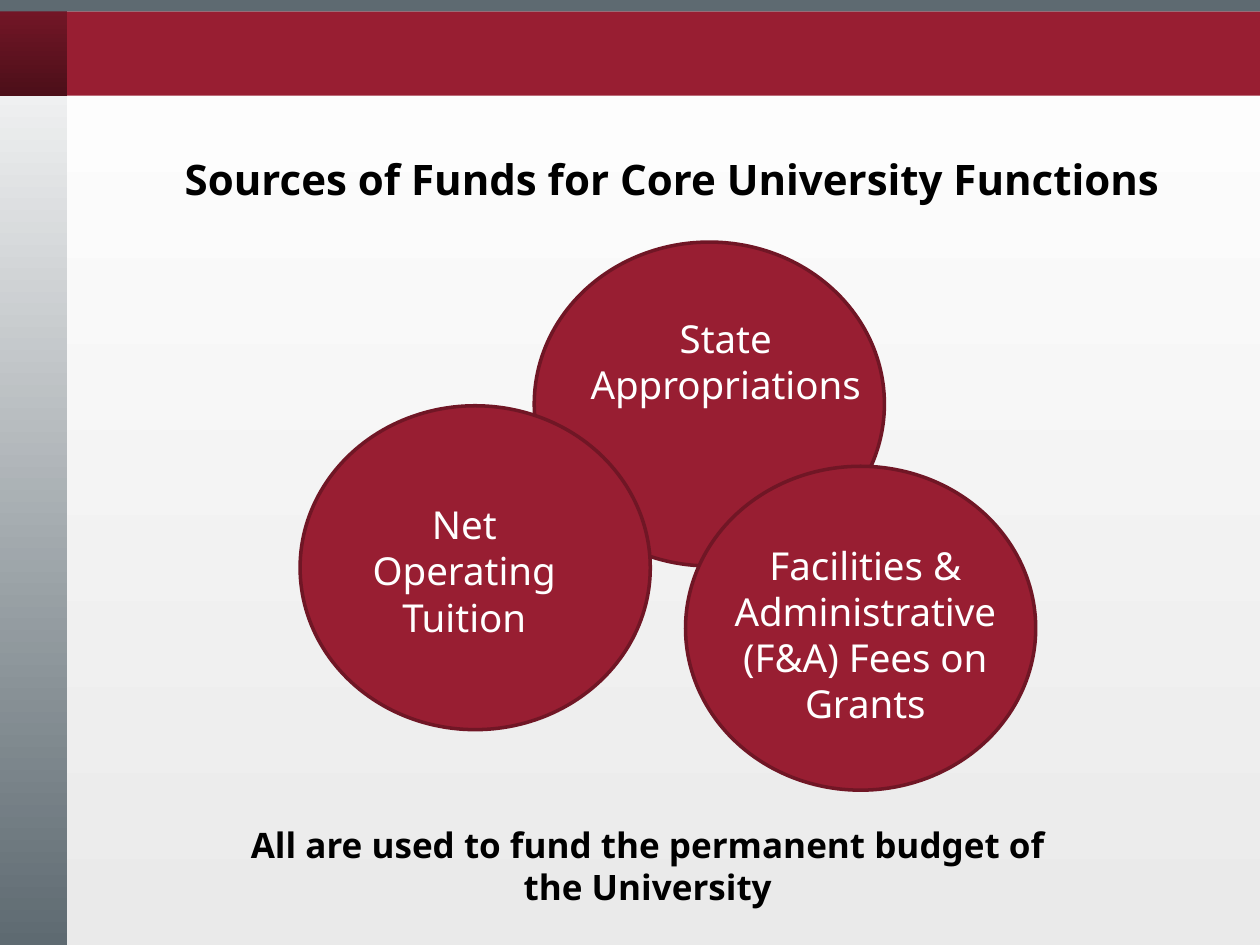
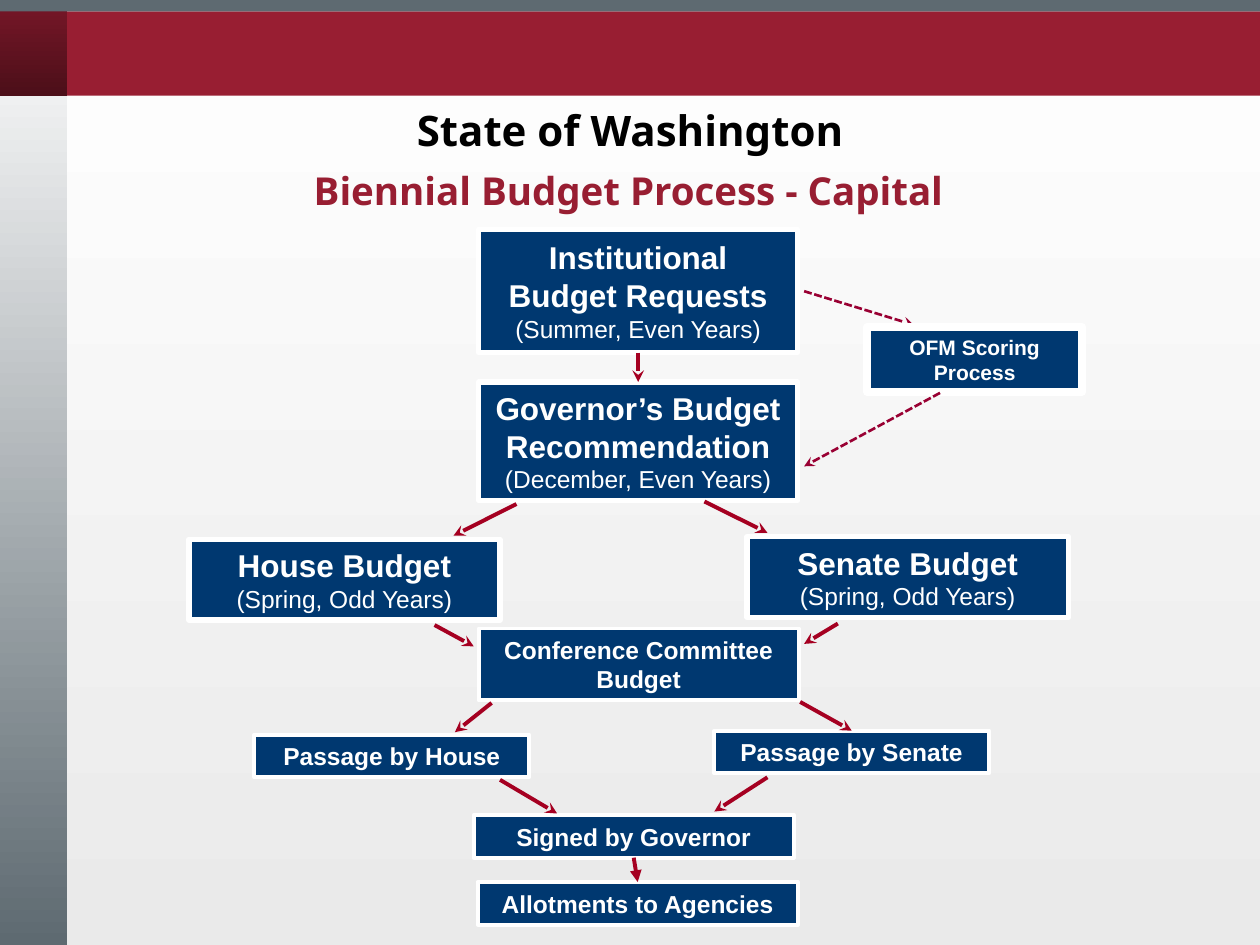
from dataclasses import dataclass

import pptx
import pptx.dml.color
import pptx.enum.dml
import pptx.enum.shapes
import pptx.enum.text
import pptx.oxml.ns
import pptx.util
from lxml import etree

Cm = pptx.util.Cm
Pt = pptx.util.Pt
SHAPE = pptx.enum.shapes.MSO_SHAPE
ANCHOR = pptx.enum.text.MSO_ANCHOR
TOP, BOTTOM = 0, 2


@dataclass(frozen=True)
class Theme:
    crimson: str = "981E32"
    crimson_edge: str = "701625"
    corner_top: str = "721626"
    corner_bottom: str = "4C0F19"
    slate: str = "5E6A71"
    paper: str = "EAEAEA"
    white: str = "FFFFFF"
    black: str = "000000"
    navy: str = "003870"
    arrow: str = "A50021"
    scoring_arrow: str = "990033"
    heading_font: str = "Noto Sans"
    chart_font: str = "Arial"
    title_size: int = 24
    label_size: int = 22
    note_size: int = 20
    stage_size: int = 18
    step_size: int = 14
    scoring_size: int = 12


def rgb(color):
    return pptx.dml.color.RGBColor.from_string(color)


class Deck:
    """Holds the theme and the slide being built."""

    def __init__(self, theme):
        self.theme = theme
        self.prs = pptx.Presentation()
        self.prs.slide_width, self.prs.slide_height = Cm(25.4), Cm(19.05)
        self.slide = None

    def new_slide(self, title, area):
        t = self.theme
        self.slide = self.prs.slides.add_slide(self.prs.slide_layouts[5])
        self.gradient(self.slide.background.fill, t.paper, t.white)
        # Side strip, red band, dark corner and top edge
        self.shape((0, 0, 1.35, 19.05), (t.slate, t.white))
        self.shape((0, 0.23, 25.4, 1.7), t.crimson)
        self.shape((-0.05, 0.23, 1.4, 1.7), (t.corner_bottom, t.corner_top))
        self.shape((-0.05, 0, 25.45, 0.23), t.slate)
        # Title
        heading = self.slide.shapes.title
        heading.left, heading.top, heading.width, heading.height = map(Cm, area)
        self.add_lines(heading, [(title, t.title_size, True)], t.heading_font, t.black)

    def gradient(self, fill, bottom, top):
        fill.gradient()
        fill.gradient_angle = 90
        for stop, color in zip(fill.gradient_stops, (bottom, top)):
            stop.color.rgb = rgb(color)

    def shape(self, area, fill, kind=SHAPE.RECTANGLE, edge=None, edge_width=0):
        shape = self.slide.shapes.add_shape(kind, *map(Cm, area))
        shape.shadow.inherit = False
        if isinstance(fill, tuple):
            self.gradient(shape.fill, *fill)
        else:
            shape.fill.solid()
            shape.fill.fore_color.rgb = rgb(fill)
        if edge:
            shape.line.color.rgb = rgb(edge)
            shape.line.width = Pt(edge_width)
        else:
            shape.line.fill.background()
        return shape

    def add_lines(self, holder, lines, font, color, anchor=ANCHOR.TOP):
        """Add one centred paragraph for each (text, size, bold)."""
        frame = holder.text_frame
        frame.word_wrap = True
        frame.auto_size = pptx.enum.text.MSO_AUTO_SIZE.NONE
        frame.vertical_anchor = anchor
        for number, (text, size, bold) in enumerate(lines):
            paragraph = frame.add_paragraph() if number else frame.paragraphs[0]
            paragraph.alignment = pptx.enum.text.PP_ALIGN.CENTER
            run = paragraph.add_run()
            run.text = text
            run.font.name, run.font.size, run.font.bold = font, Pt(size), bold
            run.font.color.rgb = rgb(color)

    def text(self, text, area, size, color, bold=False):
        holder = self.slide.shapes.add_textbox(*map(Cm, area))
        self.add_lines(holder, [(text, size, bold)], self.theme.heading_font, color)

    def box(self, lines, area, edge_width):
        t = self.theme
        box = self.shape(area, t.navy, edge=t.white, edge_width=edge_width)
        self.add_lines(box, lines, t.chart_font, t.white, ANCHOR.MIDDLE)
        return box

    def stage(self, name, season, area):
        t = self.theme
        return self.box([(name, t.stage_size, True), (season, t.step_size, False)], area, 3)

    def step(self, name, area):
        return self.box([(name, self.theme.step_size, True)], area, 2.25)

    def arrow(self, start, end, head="stealth", scoring=False):
        """Draw an arrow; an end is a point (x, y) or a joined (box, side)."""
        t = self.theme
        joined = [not isinstance(spot[0], (int, float)) for spot in (start, end)]
        points = [(0, 0) if join else spot for join, spot in zip(joined, (start, end))]
        arrow = self.slide.shapes.add_connector(
            pptx.enum.shapes.MSO_CONNECTOR.STRAIGHT, *map(Cm, points[0] + points[1]))
        if joined[0]:
            arrow.begin_connect(*start)
        if joined[1]:
            arrow.end_connect(*end)
        arrow.line.color.rgb = rgb(t.scoring_arrow if scoring else t.arrow)
        arrow.line.width = Pt(1.5 if scoring else 2.25)
        if scoring:
            arrow.line.dash_style = pptx.enum.dml.MSO_LINE.SQUARE_DOT
        # Arrowhead, and no shadow
        properties = arrow._element.spPr
        qn = pptx.oxml.ns.qn
        etree.SubElement(properties.find(qn("a:ln")), qn("a:tailEnd"), type=head)
        etree.SubElement(properties, qn("a:effectLst"))


def funding_sources(deck):
    t = deck.theme
    deck.new_slide("Sources of Funds for Core University Functions", (1.68, 2.97, 23.72, 1.3))
    deck.text("All are used to fund the permanent budget of the University",
              (4.17, 16.48, 17.78, 1.96), t.note_size, t.black, bold=True)
    # Overlapping circles, then their labels
    for left, top in ((10.77, 4.88), (6.05, 8.18), (13.82, 9.4)):
        deck.shape((left, top, 7.06, 6.53), t.crimson, SHAPE.OVAL, t.crimson_edge, 2)
    for source, area in (
        ("State Appropriations", (11.53, 6.22, 6.2, 2.13)),
        ("Net Operating Tuition", (7.19, 9.98, 4.34, 3.07)),
        ("Facilities & Administrative (F&A) Fees on Grants", (14.45, 10.8, 5.99, 4.01)),
    ):
        deck.text(source, area, t.label_size, t.white)


def capital_budget_process(deck):
    t = deck.theme
    deck.new_slide("State of Washington", (0, 1.98, 25.4, 1.3))
    deck.text("Biennial Budget Process - Capital", (-0.03, 3.25, 25.4, 1.19),
              t.label_size, t.crimson, bold=True)

    # Budget stages with their seasons
    governor = deck.stage("Governor’s Budget Recommendation", "(December, Even Years)",
                          (9.65, 7.7, 6.43, 2.39))
    requests = deck.stage("Institutional Budget Requests", "(Summer, Even Years)",
                          (9.65, 4.62, 6.43, 2.49))
    deck.stage("House Budget", "(Spring, Odd Years)", (3.81, 10.87, 6.27, 1.63))
    deck.stage("Senate Budget", "(Spring, Odd Years)", (15.06, 10.82, 6.48, 1.63))

    # Steps to enactment
    deck.step("Conference Committee Budget", (9.65, 12.67, 6.45, 1.45))
    deck.step("Passage by House", (5.13, 14.81, 5.54, 0.86))
    senate_passage = deck.step("Passage by Senate", (14.4, 14.73, 5.54, 0.86))
    signed = deck.step("Signed by Governor", (9.55, 16.43, 6.45, 0.86))
    allotments = deck.step("Allotments to Agencies", (9.63, 17.78, 6.45, 0.86))

    # Main flow
    for start, end in (
        ((requests, BOTTOM), (governor, TOP)),
        ((10.41, 10.16), (9.14, 10.8)),
        ((14.2, 10.11), (15.47, 10.74)),
        ((8.76, 12.6), (9.55, 13.03)),
        ((16.89, 12.57), (16.21, 12.98)),
        ((9.91, 14.17), (9.17, 14.76)),
        ((16.13, 14.15), (senate_passage, TOP)),
        ((10.08, 15.72), (11.23, 16.4)),
        ((15.47, 15.67), (14.4, 16.36)),
    ):
        deck.arrow(start, end)
    deck.arrow((signed, BOTTOM), (allotments, TOP), head="triangle")

    # Scoring detour
    deck.arrow((16.21, 5.87), (18.42, 6.55), scoring=True)
    deck.box([("OFM Scoring Process", t.scoring_size, True)], (17.48, 6.6, 4.34, 1.3), 4.5)
    deck.arrow((18.95, 7.92), (16.21, 9.4), scoring=True)


def main():
    deck = Deck(Theme())
    funding_sources(deck)
    capital_budget_process(deck)
    deck.prs.save("out.pptx")


if __name__ == "__main__":
    main()
